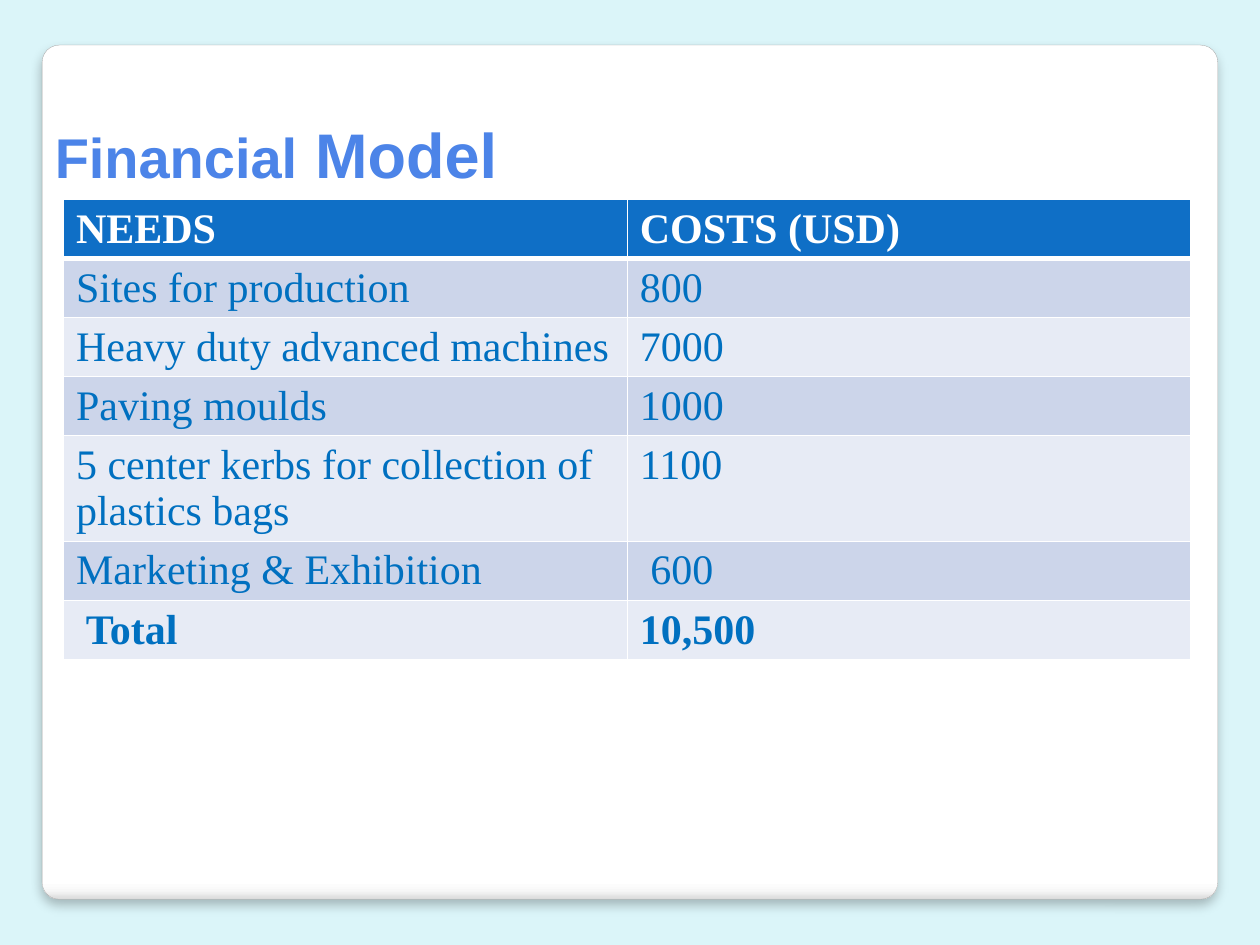
from lxml import etree
from pptx import Presentation
from pptx.dml.color import RGBColor
from pptx.enum.shapes import MSO_SHAPE
from pptx.enum.text import MSO_ANCHOR, PP_ALIGN
from pptx.oxml.ns import qn
from pptx.util import Cm, Pt

ROUNDED = MSO_SHAPE.ROUNDED_RECTANGLE
BOTTOM = MSO_ANCHOR.BOTTOM
LEFT = PP_ALIGN.LEFT

WHITE = RGBColor(0xFF, 0xFF, 0xFF)
BLACK = RGBColor(0x00, 0x00, 0x00)
PALE_AQUA = RGBColor(0xDB, 0xF5, 0xF9)
OFF_WHITE = RGBColor(0xF7, 0xF7, 0xF7)
SILVER = RGBColor(0xDA, 0xDA, 0xDA)
GREY = RGBColor(0xA4, 0xA4, 0xA4)
TITLE_BLUE = RGBColor(0x4C, 0x84, 0xE8)
HEADER_BLUE = RGBColor(0x0F, 0x6F, 0xC6)
TEXT_BLUE = RGBColor(0x00, 0x70, 0xC0)
BAND_DARK = RGBColor(0xCC, 0xD5, 0xEA)
BAND_LIGHT = RGBColor(0xE7, 0xEB, 0xF5)

BUDGET = [
    ("NEEDS", "COSTS (USD)"),
    ("Sites for production", "800"),
    ("Heavy duty advanced machines", "7000"),
    ("Paving moulds", "1000"),
    ("5 center kerbs for collection of plastics bags", "1100"),
    ("Marketing & Exhibition", " 600"),
    (" Total", "10,500"),
]


def add_xml(parent, tag, **attributes):
    child = etree.SubElement(parent, qn(tag))
    for name, value in attributes.items():
        child.set(name, str(value))
    return child


class SlideBuilder:
    title_font = "Arial"
    table_font = "Times New Roman"
    table_size = 24

    def __init__(self, slide):
        self.slide = slide

    def background(self, color):
        fill = self.slide.background.fill
        fill.solid()
        fill.fore_color.rgb = color

    def run(self, paragraph, text, font, size, color, bold):
        run = paragraph.add_run()
        run.text = text
        run.font.name = font
        run.font.size = Pt(size)
        run.font.color.rgb = color
        run.font.bold = bold

    def card(self, left, top, width, height, stops):
        card = self.slide.shapes.add_shape(ROUNDED, Cm(left), Cm(top), Cm(width), Cm(height))
        card.adjustments[0] = 0.02
        card.fill.gradient()
        card.fill.gradient_angle = 270
        properties = card._element.spPr
        gradient = properties.find(".//" + qn("a:gsLst"))
        for stop in list(gradient):
            gradient.remove(stop)
        for percent, color in stops:
            stop = add_xml(gradient, "a:gs", pos=percent * 1000)
            add_xml(stop, "a:srgbClr", val=color)
        card.line.color.rgb = GREY
        card.line.width = Pt(0.16)
        card.shadow.inherit = False
        shadow = add_xml(properties.find(qn("a:effectLst")), "a:outerShdw",
                         blurRad=Pt(6), dist=Pt(4), dir=5400000, rotWithShape=0)
        shade = add_xml(shadow, "a:srgbClr", val=BLACK)
        add_xml(shade, "a:alpha", val=25000)
        self.slide.shapes._spTree.insert(2, card._element)

    def title(self, left, top, width, height, parts):
        title = self.slide.shapes.title
        title.left, title.top = Cm(left), Cm(top)
        title.width, title.height = Cm(width), Cm(height)
        frame = title.text_frame
        frame.word_wrap = True
        frame.vertical_anchor = BOTTOM
        heading = frame.paragraphs[0]
        heading.alignment = LEFT
        for text, size in parts:
            self.run(heading, text, self.title_font, size, TITLE_BLUE, True)

    def borders(self, cell, **widths):
        properties = cell._tc.get_or_add_tcPr()
        for side in "LRTB":
            line = add_xml(properties, f"a:ln{side}", w=Pt(widths.get(side, 1)))
            add_xml(add_xml(line, "a:solidFill"), "a:srgbClr", val=WHITE)

    def table(self, left, top, width, row_height, rows):
        table = self.slide.shapes.add_table(
            len(rows), len(rows[0]), Cm(left), Cm(top), Cm(width), Cm(row_height * len(rows))).table
        for index, texts in enumerate(rows):
            header = index == 0
            if header:
                fill, widths = HEADER_BLUE, {"B": 3}
            else:
                fill = BAND_DARK if index % 2 else BAND_LIGHT
                widths = {"T": 3} if index == 1 else {}
            bold = header or index == len(rows) - 1
            for column, text in enumerate(texts):
                cell = table.cell(index, column)
                self.borders(cell, **widths)
                cell.fill.solid()
                cell.fill.fore_color.rgb = fill
                self.run(cell.text_frame.paragraphs[0], text, self.table_font,
                         self.table_size, WHITE if header else TEXT_BLUE, bold)


def main():
    presentation = Presentation()
    presentation.slide_width, presentation.slide_height = Cm(25.4), Cm(19.05)
    builder = SlideBuilder(presentation.slides.add_slide(presentation.slide_layouts[5]))
    builder.background(PALE_AQUA)
    builder.card(0.85, 0.91, 23.7, 17.22,
                 [(0, WHITE), (98, WHITE), (99, OFF_WHITE), (100, SILVER)])
    builder.title(0.85, 1.07, 22.73, 2.92, [("Financial", 32), (" Model", 36)])
    builder.table(1.28, 4.02, 22.73, 1.04, BUDGET)
    presentation.save("out.pptx")


if __name__ == "__main__":
    main()
